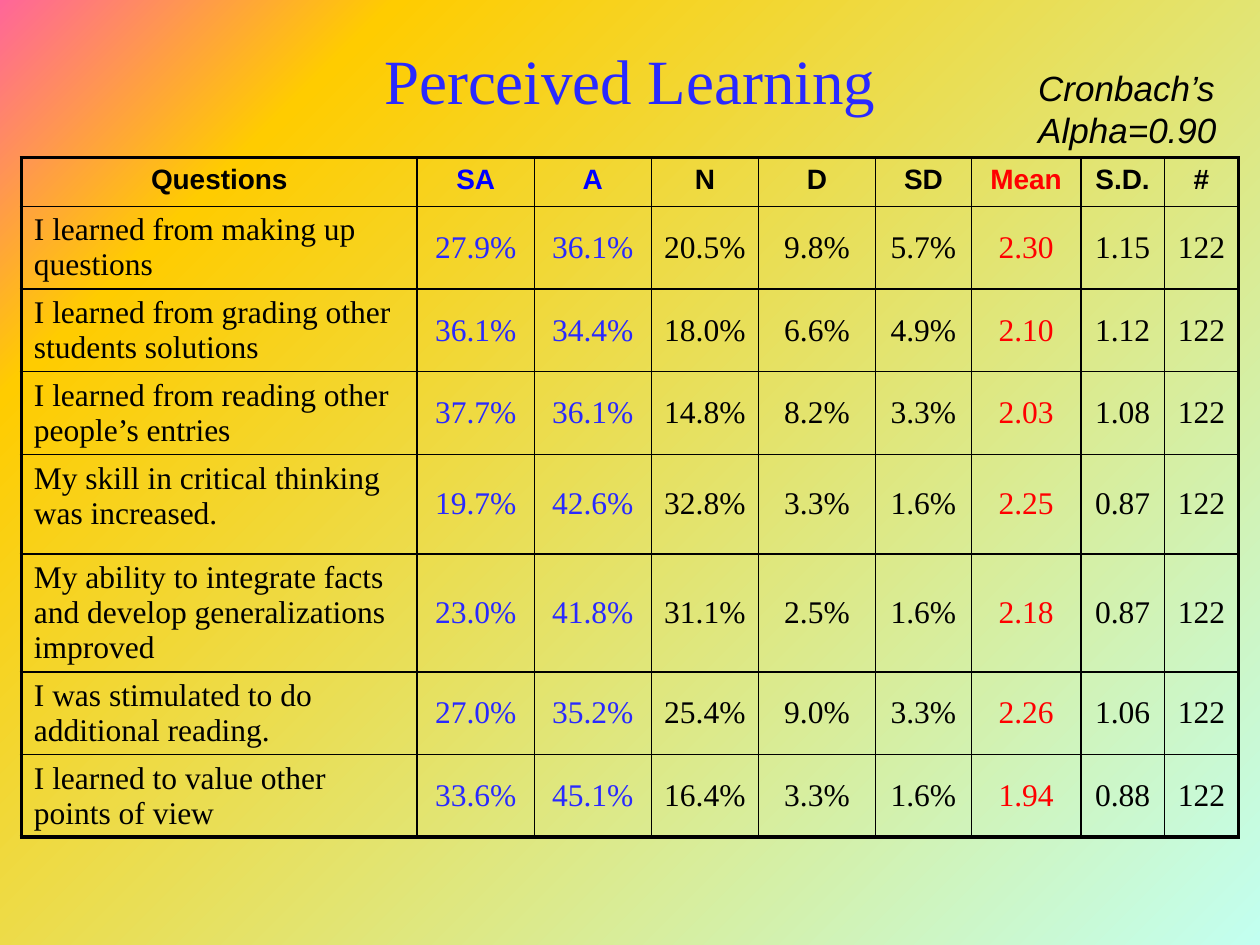
from copy import deepcopy
from typing import NamedTuple, Optional

from lxml import etree
from pptx import Presentation
from pptx.dml.color import RGBColor
from pptx.enum.text import MSO_ANCHOR, PP_ALIGN
from pptx.oxml.ns import qn
from pptx.util import Cm, Pt

LEFT, CENTER = PP_ALIGN.LEFT, PP_ALIGN.CENTER
TOP, MIDDLE = MSO_ANCHOR.TOP, MSO_ANCHOR.MIDDLE
SANS, SERIF = "Arial", "Times New Roman"
COLORS = {
    "black": "000000", "red": "FF0000", "blue": "0000FF", "soft_blue": "2929FF",
    "pink": "FF6699", "gold": "FFCC00", "mint": "C2FFF0",
}
BACKGROUND_STOPS = [("pink", 0), ("gold", 0.18), ("mint", 1)]
OUTER, INNER = Pt(2.25), Pt(1)


class Style(NamedTuple):
    font: str
    size: float
    color: str = "black"
    bold: bool = False
    italic: bool = False
    align: PP_ALIGN = LEFT
    anchor: MSO_ANCHOR = TOP
    leading: Optional[float] = None


class Column(NamedTuple):
    heading: str
    width: float
    heading_color: str = "black"
    value_color: str = "black"


class Question(NamedTuple):
    text: str
    values: str
    height: float = 1.66


COLUMNS = [
    Column("Questions", 7.98),
    Column("SA", 2.36, "blue", "soft_blue"),
    Column("A", 2.36, "blue", "soft_blue"),
    Column("N", 2.16),
    Column("D", 2.36),
    Column("SD", 1.93),
    Column("Mean", 2.21, "red", "red"),
    Column("S.D.", 1.68),
    Column("#", 1.5),
]
HEADING_HEIGHT = 0.98
QUESTIONS = [
    Question("I learned from making up questions",
             "27.9% 36.1% 20.5% 9.8% 5.7% 2.30 1.15 122"),
    Question("I learned from grading other students solutions",
             "36.1% 34.4% 18.0% 6.6% 4.9% 2.10 1.12 122"),
    Question("I learned from reading other people’s entries",
             "37.7% 36.1% 14.8% 8.2% 3.3% 2.03 1.08 122"),
    Question("My skill in critical thinking was increased.",
             "19.7% 42.6% 32.8% 3.3% 1.6% 2.25 0.87 122", 2.01),
    Question("My ability to integrate facts and develop generalizations improved",
             "23.0% 41.8% 31.1% 2.5% 1.6% 2.18 0.87 122", 2.36),
    Question("I was stimulated to do additional reading.",
             "27.0% 35.2% 25.4% 9.0% 3.3% 2.26 1.06 122"),
    Question("I learned to value other points of view",
             "33.6% 45.1% 16.4% 3.3% 1.6% 1.94 0.88 122"),
]


def rgb(name: str) -> RGBColor:
    return RGBColor.from_string(COLORS[name])


def write(tf, text: str, style: Style) -> None:
    tf.text = text
    p = tf.paragraphs[0]
    p.alignment = style.align
    if style.leading:
        p.line_spacing = Pt(style.leading)
    font = p.runs[0].font
    font.name, font.size = style.font, Pt(style.size)
    font.bold, font.italic = style.bold, style.italic
    font.color.rgb = rgb(style.color)


def add_text(s, left: float, top: float, width: float, height: float,
             text: str, style: Style) -> None:
    tf = s.shapes.add_textbox(Cm(left), Cm(top), Cm(width), Cm(height)).text_frame
    tf.word_wrap = True
    tf.vertical_anchor = style.anchor
    write(tf, text, style)


def set_borders(cell, widths: dict) -> None:
    """Draw black lines; widths maps each side (L, R, T, B) to a length."""
    tc_pr = cell._tc.get_or_add_tcPr()
    for side, width in widths.items():
        ln = etree.SubElement(tc_pr, qn(f"a:ln{side}"), w=str(int(width)))
        fill = etree.SubElement(ln, qn("a:solidFill"))
        etree.SubElement(fill, qn("a:srgbClr"), val=COLORS["black"])


def cell_style(row: int, col: int) -> Style:
    column = COLUMNS[col]
    if row == 0:
        return Style(SANS, 16, column.heading_color, bold=True, align=CENTER)
    if col == 0:
        return Style(SERIF, 18, leading=20)
    return Style(SERIF, 18, column.value_color, align=CENTER, anchor=MIDDLE)


def add_results_table(s, left: float, top: float) -> None:
    rows = [[c.heading for c in COLUMNS]]
    rows += [[q.text, *q.values.split()] for q in QUESTIONS]
    heights = [HEADING_HEIGHT] + [q.height for q in QUESTIONS]
    widths = [c.width for c in COLUMNS]
    table = s.shapes.add_table(len(rows), len(widths), Cm(left), Cm(top),
                               Cm(sum(widths)), Cm(sum(heights))).table
    table.first_row = table.horz_banding = False
    for column, width in zip(table.columns, widths):
        column.width = Cm(width)
    for row, height in zip(table.rows, heights):
        row.height = Cm(height)

    last_row, last_col = len(rows) - 1, len(widths) - 1
    for i, texts in enumerate(rows):
        for j, text in enumerate(texts):
            cell, style = table.cell(i, j), cell_style(i, j)
            set_borders(cell, {
                "L": OUTER if j == 0 else INNER,
                "R": OUTER if j == last_col else INNER,
                "T": OUTER if i == 0 else INNER,
                "B": OUTER if i == last_row else INNER,
            })
            cell.fill.background()
            cell.vertical_anchor = style.anchor
            write(cell.text_frame, text, style)
            if i and j:
                cell.margin_left = cell.margin_right = Cm(0.18)
                cell.margin_top = cell.margin_bottom = 0


def paint_background(s) -> None:
    fill = s.background.fill
    fill.gradient()
    fill.gradient_angle = 315
    stops = s._element.find(".//" + qn("a:gsLst"))
    stops.append(deepcopy(stops[0]))
    for stop, (color, position) in zip(fill.gradient_stops, BACKGROUND_STOPS):
        stop.color.rgb = rgb(color)
        stop.position = position


def main() -> None:
    prs = Presentation()
    prs.slide_width, prs.slide_height = Cm(25.4), Cm(19.05)
    s = prs.slides.add_slide(prs.slide_layouts[6])
    paint_background(s)
    add_text(s, 1.9, 0, 21.6, 3.18, "Perceived Learning",
             Style(SERIF, 36, "soft_blue", align=CENTER, anchor=MIDDLE))
    add_results_table(s, 0.43, 3.18)
    add_text(s, 20.68, 1.22, 4.32, 1.96, "Cronbach’s Alpha=0.90",
             Style(SANS, 20, italic=True))
    prs.save("out.pptx")


if __name__ == "__main__":
    main()
